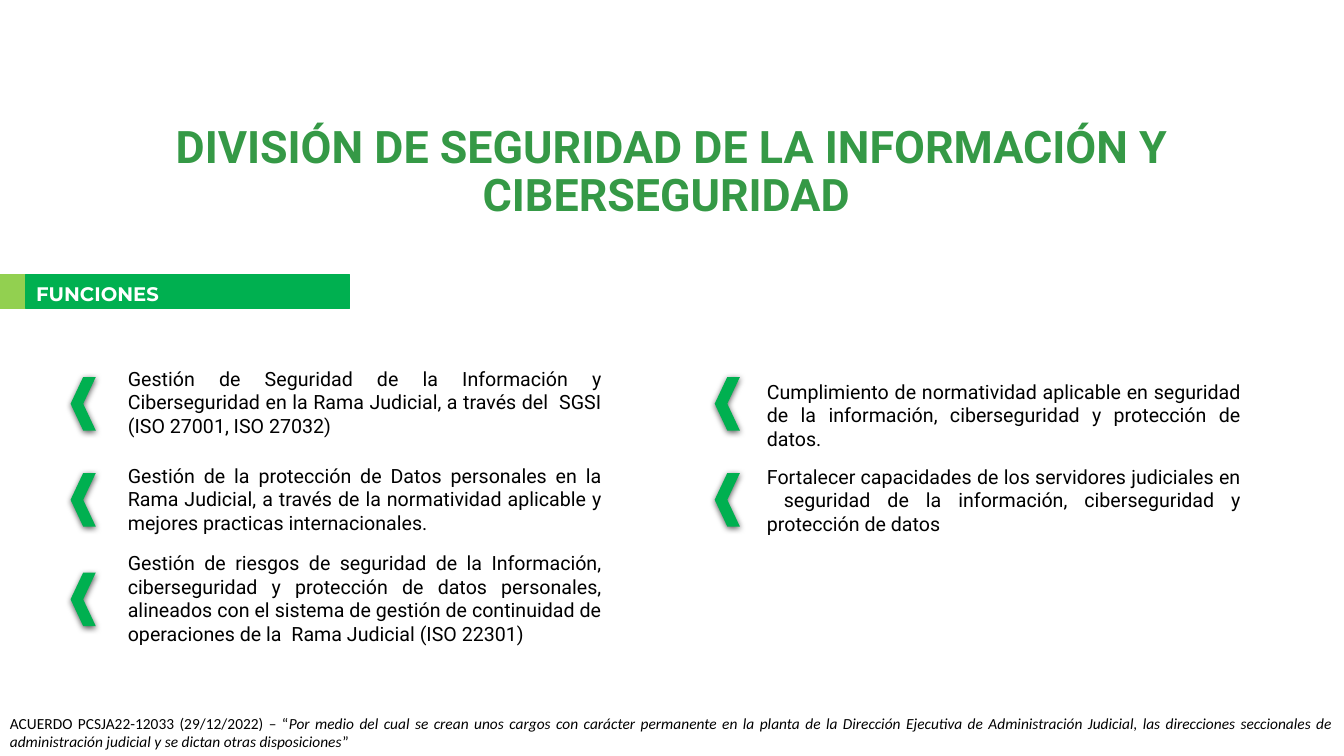
from dataclasses import dataclass
from typing import Any

from lxml import etree
from pptx import Presentation
from pptx.dml.color import RGBColor
from pptx.enum.shapes import MSO_SHAPE
from pptx.enum.text import MSO_ANCHOR, MSO_AUTO_SIZE, PP_ALIGN
from pptx.oxml.ns import qn
from pptx.util import Pt

RECT, CHEVRON = MSO_SHAPE.RECTANGLE, MSO_SHAPE.CHEVRON
LEFT, CENTER, JUSTIFY = PP_ALIGN.LEFT, PP_ALIGN.CENTER, PP_ALIGN.JUSTIFY
TOP, MIDDLE = MSO_ANCHOR.TOP, MSO_ANCHOR.MIDDLE
GROW, FIXED = MSO_AUTO_SIZE.SHAPE_TO_FIT_TEXT, MSO_AUTO_SIZE.NONE

BLACK = RGBColor(0x00, 0x00, 0x00)
WHITE = RGBColor(0xFF, 0xFF, 0xFF)
TITLE = RGBColor(0x35, 0x99, 0x46)
GREEN = RGBColor(0x00, 0xB0, 0x50)
LIME = RGBColor(0x92, 0xD0, 0x50)

WIDE, HIGH = 960, 540
MARK_W, MARK_H = 18, 38.2
TEXT_W = 352.8


@dataclass(frozen=True)
class Box:
    x: float
    y: float
    w: float
    h: float

    def emu(self) -> tuple[Pt, Pt, Pt, Pt]:
        return Pt(self.x), Pt(self.y), Pt(self.w), Pt(self.h)


@dataclass(frozen=True)
class Column:
    mark: float
    text: float


@dataclass(frozen=True)
class Duty:
    col: Column
    mark: float
    top: float
    high: float
    text: str


ONE, TWO = Column(50.4, 84.24), Column(510.5, 540.72)
ROWS = (269.3, 337.9, 409)

DUTIES = (
    Duty(ONE, ROWS[0], 258.5, 58.3,
         "Gestión de Seguridad de la Información y Ciberseguridad en la Rama "
         "Judicial, a través del  SGSI (ISO 27001, ISO 27032)"),
    Duty(ONE, ROWS[1], 327.6, 58.3,
         "Gestión de la protección de Datos personales en la Rama Judicial, a "
         "través de la normatividad aplicable y mejores practicas "
         "internacionales."),
    Duty(ONE, ROWS[2], 390.2, 74.9,
         "Gestión de riesgos de seguridad de la Información, ciberseguridad y "
         "protección de datos personales, alineados con el sistema de gestión "
         "de continuidad de operaciones de la  Rama Judicial (ISO 22301)"),
    Duty(TWO, ROWS[0], 267.8, 41,
         "Cumplimiento de normatividad aplicable en seguridad de la "
         "información, ciberseguridad y protección de datos."),
    Duty(TWO, ROWS[1], 328.3, 58.3,
         "Fortalecer capacidades de los servidores judiciales en  seguridad "
         "de la información, ciberseguridad y protección de datos "),
)


def write(to: Any, box: Box, *runs: str, size: float, font: str = "Roboto",
          color: RGBColor = BLACK, bold: bool = False, slant: int = -1,
          align: PP_ALIGN = JUSTIFY, anchor: MSO_ANCHOR = TOP,
          fit: MSO_AUTO_SIZE = GROW, space: float = 1.0) -> None:
    """Add one paragraph of text; slant is the index of the italic run."""
    frame = to.shapes.add_textbox(*box.emu()).text_frame
    frame.word_wrap = True
    frame.auto_size = fit
    frame.vertical_anchor = anchor
    par = frame.paragraphs[0]
    par.alignment = align
    par.line_spacing = space
    for i, text in enumerate(runs):
        run = par.add_run()
        run.text = text
        run.font.name = font
        run.font.size = Pt(size)
        run.font.bold = bold
        run.font.italic = i == slant
        run.font.color.rgb = color


def draw(to: Any, kind: MSO_SHAPE, box: Box, color: RGBColor) -> Any:
    shape = to.shapes.add_shape(kind, *box.emu())
    shape.shadow.inherit = False
    shape.fill.solid()
    shape.fill.fore_color.rgb = color
    shape.line.fill.background()
    return shape


def edge(shape: Any, color: RGBColor) -> None:
    shape.line.color.rgb = color
    shape.line.width = Pt(1)


def shade(shape: Any) -> None:
    """Cast a soft black shadow straight down."""
    list_ = shape.element.spPr.find(qn("a:effectLst"))
    cast = etree.SubElement(list_, qn("a:outerShdw"), blurRad=str(Pt(4.5)),
                            dist=str(Pt(1.5)), dir="5400000",
                            rotWithShape="0")
    tint = etree.SubElement(cast, qn("a:srgbClr"), val=str(BLACK))
    etree.SubElement(tint, qn("a:alpha"), val="63000")


def add_duty(slide: Any, duty: Duty) -> None:
    group = slide.shapes.add_group_shape()
    write(group, Box(duty.col.text, duty.top, TEXT_W, duty.high),
          duty.text, size=14)
    mark = draw(group, CHEVRON,
                Box(duty.col.mark, duty.mark, MARK_W, MARK_H), GREEN)
    mark.rotation = 180
    shade(mark)


def main() -> None:
    deck = Presentation()
    deck.slide_width, deck.slide_height = Pt(WIDE), Pt(HIGH)
    slide = deck.slides.add_slide(deck.slide_layouts[6])

    # Source note and title
    write(slide, Box(0, 506.2, WIDE, 33.8),
          "ACUERDO PCSJA22-12033 (29/12/2022) – “",
          "Por medio del cual se crean unos cargos con carácter permanente en "
          "la planta de la Dirección Ejecutiva de Administración Judicial, las "
          "direcciones seccionales de administración judicial y se dictan "
          "otras disposiciones",
          "”", size=11, font="Calibri", slant=1)
    write(slide, Box(0, 104.4, WIDE, 38.2),
          "DIVISIÓN DE SEGURIDAD DE LA INFORMACIÓN Y CIBERSEGURIDAD ",
          size=32, color=TITLE, bold=True, align=CENTER, anchor=MIDDLE,
          fit=FIXED, space=0.9)

    # Section banner
    group = slide.shapes.add_group_shape()
    for x, w, color in ((0, 18.7, LIME), (18.7, 231.1, GREEN)):
        edge(draw(group, RECT, Box(x, 196.1, w, 24.5), color), color)
    write(group, Box(18.7, 198, 288, 24.5), "FUNCIONES", size=14,
          font="Montserrat", color=WHITE, bold=True, align=LEFT)

    # Duties with their markers
    for duty in DUTIES:
        add_duty(slide, duty)

    deck.save("out.pptx")


if __name__ == "__main__":
    main()
